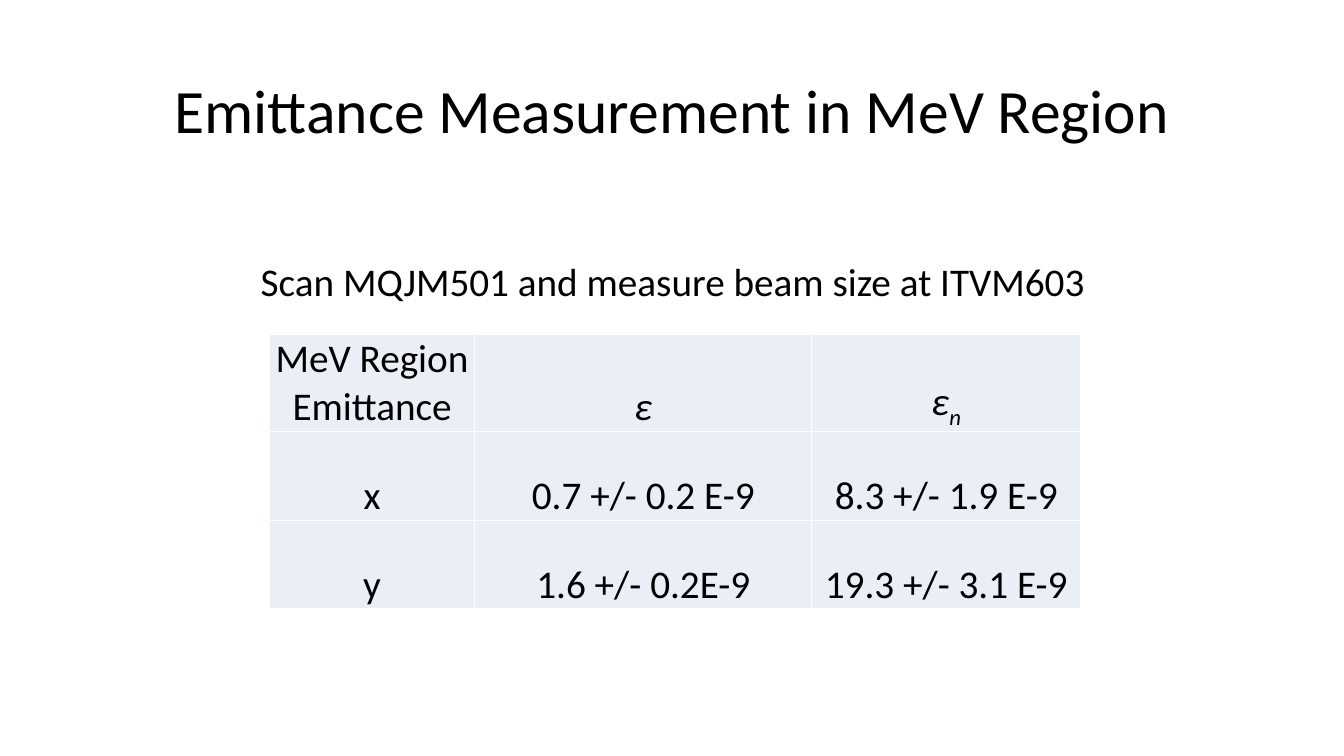
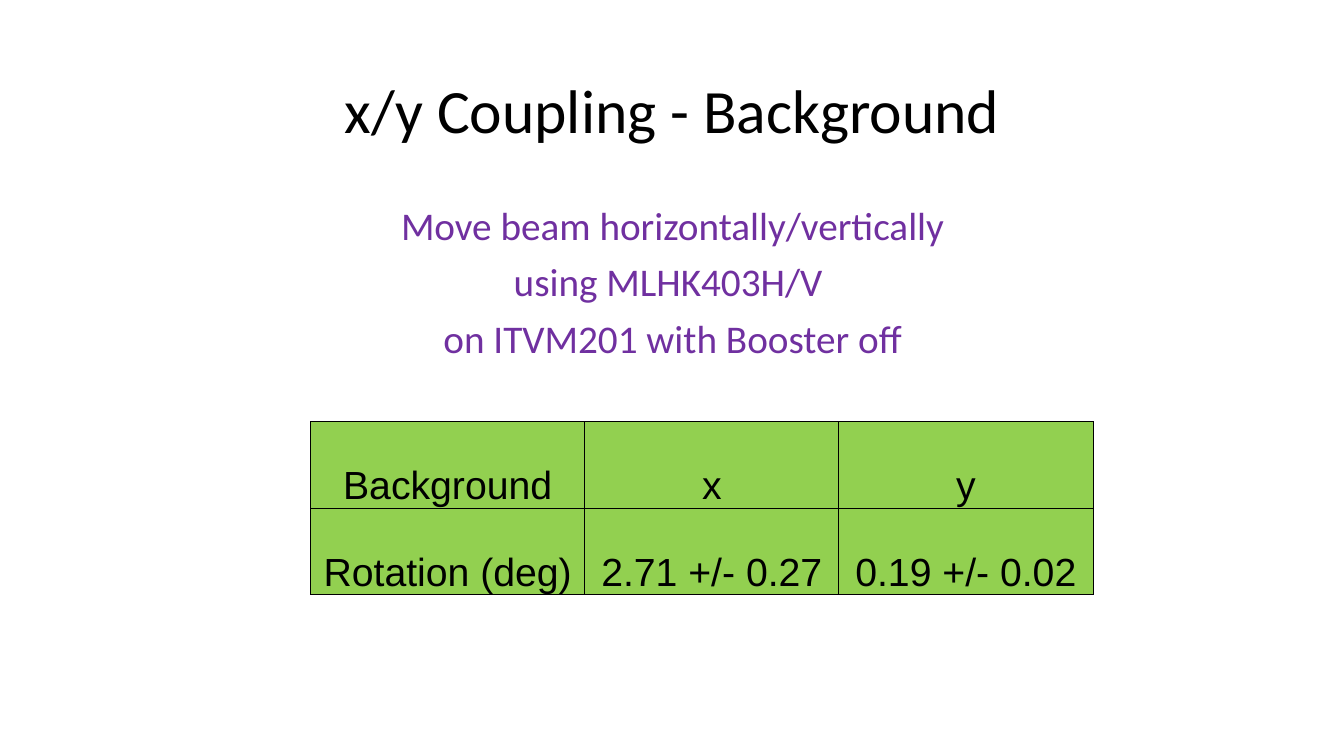
from lxml import etree
from pptx import Presentation
from pptx.dml.color import RGBColor
from pptx.enum.text import MSO_ANCHOR as Anchor, MSO_AUTO_SIZE as AutoSize, PP_ALIGN as Align
from pptx.oxml.ns import qn
from pptx.util import Inches, Pt

COLORS = {"ink": "000000", "purple": "7030A0", "pale": "EAEFF7",
          "green": "92D050", "white": "FFFFFF"}

# Boxes are left, top, width, height in inches
TITLE_BOX = (0.92, 0.4, 11.5, 1.45)
BODY_BOX = (0.92, 2, 11.5, 4.76)
LOWER_BODY_BOX = (0.92, 2.56, 11.5, 4.2)

PARA_FORMAT = {"alignment": Align.CENTER, "line_spacing": 0.9}
FRAME_FORMAT = {"word_wrap": True, "auto_size": AutoSize.NONE}
CELL_FORMAT = {"vertical_anchor": Anchor.BOTTOM, "margin_left": Inches(0.01),
               "margin_right": Inches(0.01), "margin_top": Inches(0.01),
               "margin_bottom": 0}


def apply(target, values):
    for name, value in values.items():
        setattr(target, name, value)


def style_font(font, size, color, face="Calibri"):
    apply(font, {"size": Pt(size), "name": face})
    font.color.rgb = RGBColor.from_string(COLORS[color])


def place(shape, box):
    apply(shape, dict(zip(("left", "top", "width", "height"), map(Inches, box))))


def fill_placeholder(shape, box, lines, size, color, space_before=0):
    """Put centred, unbulleted lines in a template placeholder."""
    place(shape, box)
    frame = shape.text_frame
    apply(frame, FRAME_FORMAT)
    frame.text = "\n".join(lines)
    for para in frame.paragraphs:
        apply(para, PARA_FORMAT)
        para.space_before = Pt(space_before)
        style_font(para.runs[0].font, size, color)
        props = para._p.get_or_add_pPr()
        props.set("marL", "0")
        props.set("indent", "0")
        etree.SubElement(props, qn("a:buNone"))


def border_cell(cell, color, width):
    props = cell._tc.get_or_add_tcPr()
    for side in ("lnL", "lnR", "lnT", "lnB"):
        line = etree.SubElement(props, qn(f"a:{side}"), w=str(Pt(width)))
        fill = etree.SubElement(line, qn("a:solidFill"))
        etree.SubElement(fill, qn("a:srgbClr"), val=COLORS[color])


def write_cell(cell, content, face):
    """Write plain text, or a (symbol, subscript) pair in italics."""
    para = cell.text_frame.paragraphs[0]
    para.alignment = Align.CENTER
    is_symbol = isinstance(content, tuple)
    for index, text in enumerate(content if is_symbol else (content,)):
        span = para.add_run()
        span.text = text
        style_font(span.font, 28, "ink", face)
        if is_symbol:
            span.font.italic = True
        if index:
            span.font._element.set("baseline", "-25000")


def add_result_table(page, left, top, widths, row_height, rows, fill, border, face):
    frame = page.shapes.add_table(len(rows), len(widths), Inches(left), Inches(top),
                                  Inches(sum(widths)), Inches(row_height * len(rows)))
    table = frame.table
    apply(table, {"first_row": False, "horz_banding": False})
    for column, width in zip(table.columns, widths):
        column.width = Inches(width)
    for row, contents in zip(table.rows, rows):
        row.height = Inches(row_height)
        for cell, content in zip(row.cells, contents):
            apply(cell, CELL_FORMAT)
            border_cell(cell, *border)
            cell.fill.solid()
            cell.fill.fore_color.rgb = RGBColor.from_string(COLORS[fill])
            write_cell(cell, content, face)


def add_result_page(deck, title, body_box, lines, color, table):
    page = deck.slides.add_slide(deck.slide_layouts[1])
    fill_placeholder(page.shapes.title, TITLE_BOX, [title], 44, "ink")
    fill_placeholder(page.placeholders[1], body_box, lines, 28, color, space_before=10)
    add_result_table(page, **table)


def main():
    deck = Presentation()
    apply(deck, {"slide_width": Inches(13.33), "slide_height": Inches(7.5)})

    # Emittance results
    add_result_page(
        deck, "Emittance Measurement in MeV Region", LOWER_BODY_BOX,
        ["Scan MQJM501 and measure beam size at ITVM603"], "ink",
        {"left": 2.67, "top": 3.32, "widths": (2.04, 3.34, 2.67), "row_height": 0.88,
         "rows": [("MeV Region Emittance", ("ɛ",), ("ɛ", "n")),
                  ("x", "0.7 +/- 0.2 E-9", "8.3 +/- 1.9 E-9"),
                  ("y", "1.6 +/- 0.2E-9", "19.3 +/- 3.1 E-9")],
         "fill": "pale", "border": ("white", 1), "face": "Calibri"})

    # Coupling background
    add_result_page(
        deck, "x/y Coupling - Background", BODY_BOX,
        ["Move beam horizontally/vertically", "using MLHK403H/V ",
         "on ITVM201 with Booster off"], "purple",
        {"left": 3.08, "top": 4.18, "widths": (2.72, 2.52, 2.52), "row_height": 0.86,
         "rows": [("Background", "x", "y"),
                  ("Rotation (deg)", "2.71 +/- 0.27", "0.19 +/- 0.02")],
         "fill": "green", "border": ("ink", 0.5), "face": "Arial"})

    deck.save("out.pptx")


if __name__ == "__main__":
    main()
